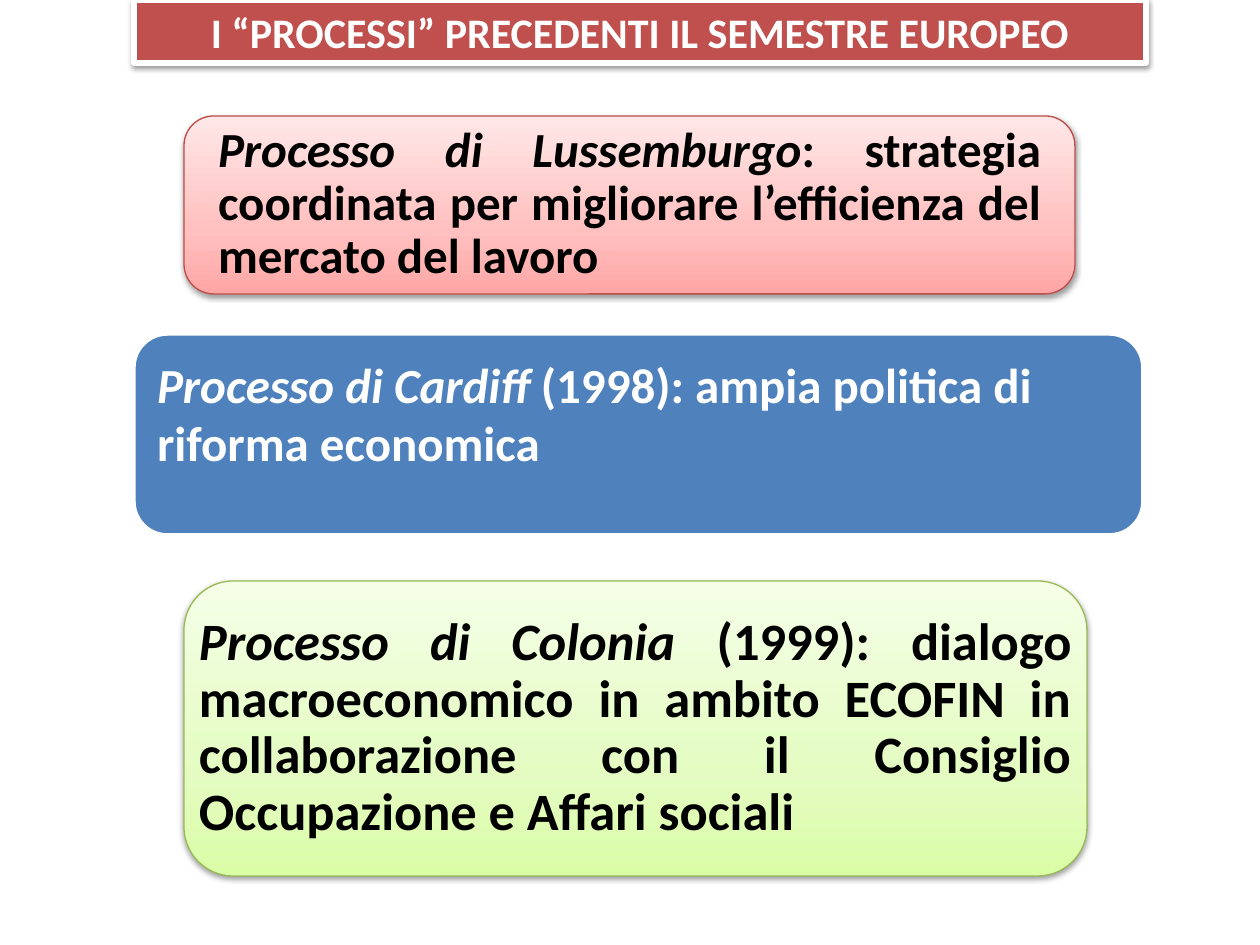
from lxml import etree
from pptx import Presentation, util as u
from pptx.dml.color import RGBColor
from pptx.enum import shapes, text
from pptx.oxml.ns import qn

EMU_PER_PX = 914400 / 126
ROUND = shapes.MSO_SHAPE.ROUNDED_RECTANGLE
RECT = shapes.MSO_SHAPE.RECTANGLE
MIDDLE, TOP = text.MSO_ANCHOR.MIDDLE, text.MSO_ANCHOR.TOP
CENTER, JUSTIFY, LEFT = (text.PP_ALIGN.CENTER, text.PP_ALIGN.JUSTIFY,
                         text.PP_ALIGN.LEFT)
BLACK, WHITE, BLUE, RED = "000000", "FFFFFF", "4F81BD", "C0504D"
PINK_STOPS = [(0, "FFA6A5"), (35, "FFC0BF"), (100, "FFE7E7")]
GREEN_STOPS = [(0, "DAFDA7"), (35, "E4FCC2"), (100, "F5FFE7")]


def px(n):
    return u.Emu(round(n * EMU_PER_PX))


def color(hex_value):
    return RGBColor.from_string(hex_value)


def set_attrs(obj, values):
    for name, value in values.items():
        setattr(obj, name, value)


def add_gradient(sp, stops):
    """Fill from the bottom edge upwards."""
    sp.fill.gradient()
    sp.fill.gradient_angle = 90
    gs_list = sp._element.spPr.find(".//" + qn("a:gsLst"))
    for gs in list(gs_list):
        gs_list.remove(gs)
    for position, hex_value in stops:
        gs = etree.SubElement(gs_list, qn("a:gs"), pos=str(position * 1000))
        etree.SubElement(gs, qn("a:srgbClr"), val=hex_value)


def add_shadow(sp):
    effects = sp._element.spPr.find(qn("a:effectLst"))
    outer = etree.SubElement(effects, qn("a:outerShdw"), blurRad="40000",
                             dist="20000", dir="5400000", rotWithShape="0")
    clr = etree.SubElement(outer, qn("a:srgbClr"), val=BLACK)
    etree.SubElement(clr, qn("a:alpha"), val="38000")


def add_panel(s, kind, box, fill, line, width, shadow=True):
    sp = s.shapes.add_shape(kind, *map(px, box))
    if isinstance(fill, str):
        sp.fill.solid()
        sp.fill.fore_color.rgb = color(fill)
    else:
        add_gradient(sp, fill)
    sp.line.color.rgb = color(line)
    sp.line.width = u.Pt(width)
    sp.shadow.inherit = False
    if shadow:
        add_shadow(sp)
    return sp


def write_text(sp, runs, size, hex_value, align, spacing=None,
               anchor=MIDDLE, inset=None):
    """Write one bold paragraph; runs are (text, italic) pairs."""
    tf = sp.text_frame
    set_attrs(tf, {"word_wrap": True, "vertical_anchor": anchor})
    if inset is not None:
        set_attrs(tf, {"margin_" + side: px(inset)
                       for side in ("left", "top", "right", "bottom")})
    p = tf.paragraphs[0]
    set_attrs(p, {"alignment": align, "line_spacing": spacing})
    for words, italic in runs:
        r = p.add_run()
        r.text = words
        set_attrs(r.font, {"name": "Calibri", "size": u.Pt(size),
                           "bold": True, "italic": italic})
        r.font.color.rgb = color(hex_value)


def add_process(s, panel, text_box, name, description, size, hex_value, **layout):
    add_panel(s, ROUND, **panel)
    tb = s.shapes.add_textbox(*map(px, text_box))
    write_text(tb, [(name, True), (description, False)], size, hex_value, **layout)


def main():
    prs = Presentation()
    set_attrs(prs, {"slide_width": px(1260), "slide_height": px(945)})
    s = prs.slides.add_slide(prs.slide_layouts[6])

    # Cardiff process
    add_process(
        s, dict(box=(134, 334, 1009, 201), fill=BLUE, line=WHITE, width=2,
                shadow=False),
        (144, 341, 989, 181), "Processo di Cardiff ",
        "(1998): ampia politica di riforma economica", 28, WHITE,
        align=LEFT, anchor=TOP, inset=13)

    # Luxembourg process
    add_process(
        s, dict(box=(184, 116, 891, 178), fill=PINK_STOPS, line="BF4C48",
                width=0.75),
        (199, 124, 861, 161), "Processo di Lussemburgo",
        ": strategia coordinata per migliorare l’efficienza del mercato del lavoro",
        28, BLACK, align=JUSTIFY, spacing=0.9, inset=19)

    # Cologne process
    cologne = (184, 581, 903, 295)
    add_process(
        s, dict(box=cologne, fill=GREEN_STOPS, line="98B955", width=0.75),
        cologne, "Processo di Colonia ",
        "(1999): dialogo macroeconomico in ambito ECOFIN in collaborazione "
        "con il Consiglio Occupazione e Affari sociali",
        30, BLACK, align=JUSTIFY, spacing=0.9, inset=15)

    # Title bar
    title = add_panel(s, RECT, (134, 0, 1012, 63), RED, WHITE, 3)
    write_text(title, [("I “PROCESSI” PRECEDENTI IL SEMESTRE EUROPEO", False)],
               24, WHITE, CENTER)

    prs.save("out.pptx")


if __name__ == "__main__":
    main()
